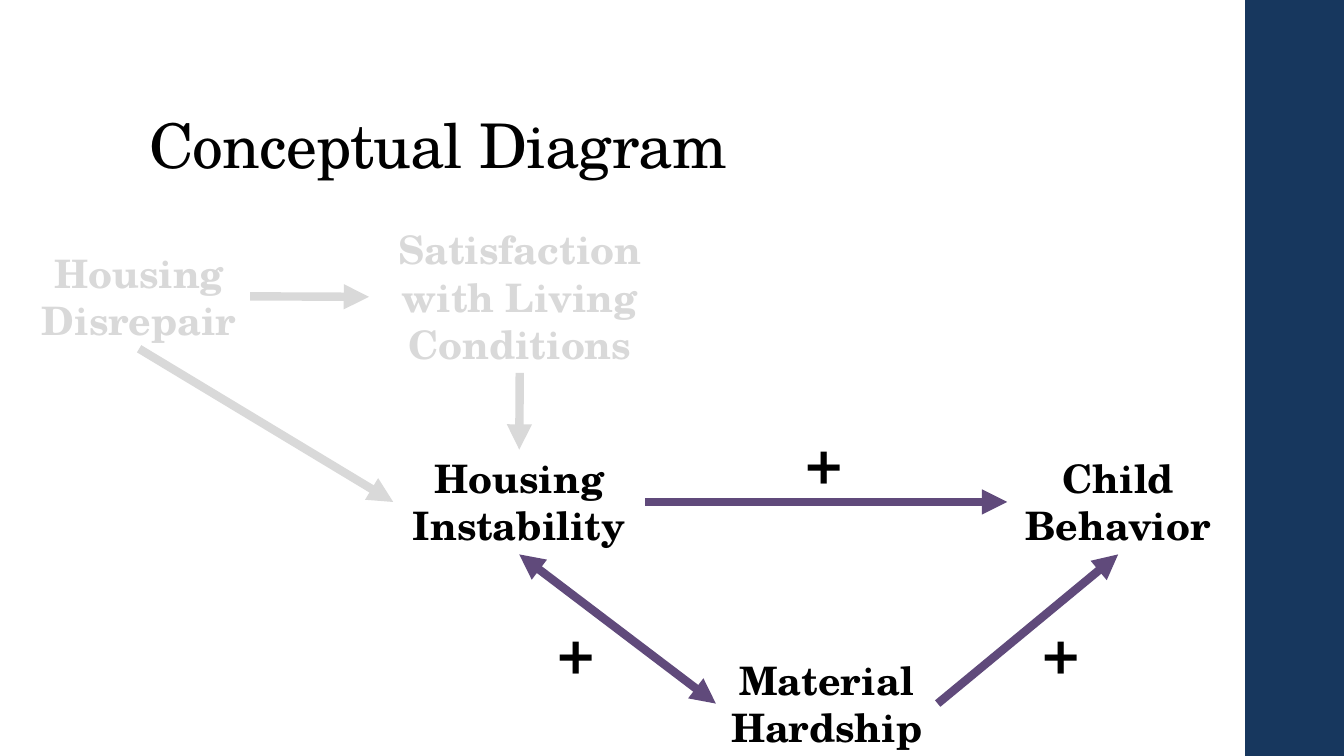
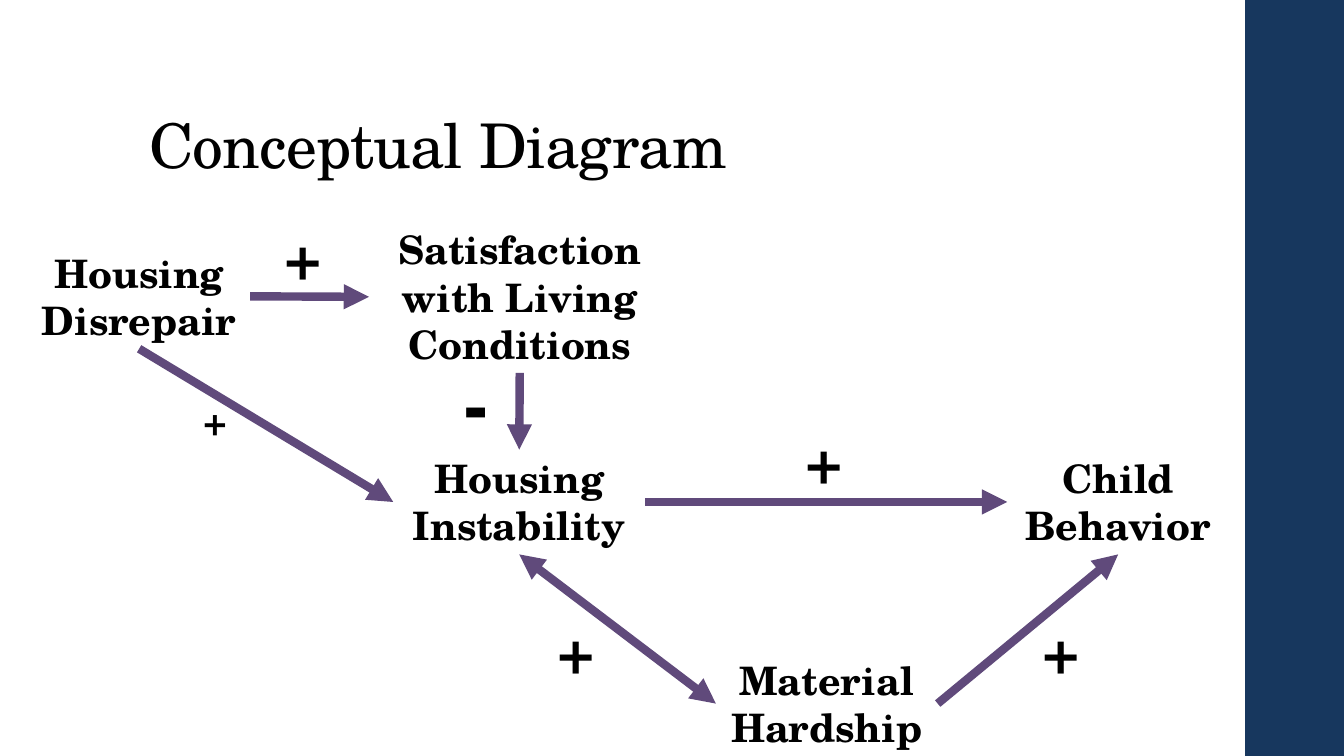
from pptx import Presentation
from pptx.dml.color import RGBColor
from pptx.enum.shapes import MSO_CONNECTOR, MSO_SHAPE
from pptx.enum.text import MSO_ANCHOR, MSO_AUTO_SIZE, PP_ALIGN
from pptx.oxml.ns import qn
from pptx.util import Inches, Pt
from lxml.etree import SubElement

FONT = "TeX Gyre Schola"
BLACK = RGBColor(0x00, 0x00, 0x00)
GRAY = RGBColor(0xD9, 0xD9, 0xD9)
NAVY = RGBColor(0x17, 0x37, 0x5E)
PURPLE = RGBColor(0x60, 0x4A, 0x7B)

TOP, LEFT, BOTTOM, RIGHT = range(4)

CONCEPTS = {
    "disrepair": ("Housing Disrepair", 0.28, 2.42, 2.2, 1.04),
    "satisfaction": ("Satisfaction with Living Conditions", 3.66, 2.19, 2.99, 1.51),
    "instability": ("Housing Instability", 3.9, 4.46, 2.5, 1.04),
    "hardship": ("Material Hardship", 7.1, 6.46, 2.2, 1.04),
    "behavior": ("Child Behavior", 9.99, 4.46, 2.2, 1.04),
}
HOUSING_CONDITIONS = {"disrepair", "satisfaction"}

LINKS = [
    ("disrepair", RIGHT, "satisfaction", LEFT, False),
    ("satisfaction", BOTTOM, "instability", TOP, False),
    ("instability", RIGHT, "behavior", LEFT, False),
    ("hardship", RIGHT, "behavior", BOTTOM, False),
    ("instability", BOTTOM, "hardship", LEFT, True),
    ("disrepair", BOTTOM, "instability", LEFT, False),
]

OUTCOME_SIGNS = [
    ("+", 5.43, 6.02, 0.84, 44),
    ("+", 7.89, 4.14, 0.84, 44),
    ("+", 10.24, 6.02, 0.84, 44),
]
CONDITION_SIGNS = [
    ("+", 2.72, 2.11, 0.84, 44),
    ("-", 4.5, 3.48, 1.01, 54),
    ("+", 1.92, 3.88, 0.57, 28),
]


def add_text(s, text, x, y, w, h, size=28, color=BLACK, bold=True,
             align=PP_ALIGN.LEFT, anchor=MSO_ANCHOR.TOP,
             fit=MSO_AUTO_SIZE.SHAPE_TO_FIT_TEXT, line_spacing=None, tracking=None):
    box = s.shapes.add_textbox(Inches(x), Inches(y), Inches(w), Inches(h))
    tf = box.text_frame
    tf.word_wrap = True
    tf.auto_size = fit
    tf.vertical_anchor = anchor
    p = tf.paragraphs[0]
    p.alignment = align
    p.line_spacing = line_spacing
    r = p.add_run()
    r.text = text
    r.font.name = FONT
    r.font.size = Pt(size)
    r.font.bold = bold
    r.font.color.rgb = color
    if tracking is not None:
        r.font._element.set("spc", str(int(tracking * 100)))
    return box


def add_arrow(s, start, start_side, end, end_side, color, two_way=False):
    arrow = s.shapes.add_connector(MSO_CONNECTOR.STRAIGHT, 0, 0, 0, 0)
    arrow.begin_connect(start, start_side)
    arrow.end_connect(end, end_side)
    arrow.line.color.rgb = color
    arrow.line.width = Pt(6)
    ln = arrow.line._get_or_add_ln()
    for tag in ("a:headEnd", "a:tailEnd") if two_way else ("a:tailEnd",):
        SubElement(ln, qn(tag), type="triangle")
    SubElement(arrow._element.spPr, qn("a:effectLst"))


def add_base_slide(prs, title):
    s = prs.slides.add_slide(prs.slide_layouts[6])
    band = s.shapes.add_shape(MSO_SHAPE.RECTANGLE, Inches(12.35), 0, Inches(0.98), prs.slide_height)
    band.shadow.inherit = False
    band.fill.solid()
    band.fill.fore_color.rgb = NAVY
    band.line.fill.background()
    add_text(s, title, 1.38, 0.4, 10.6, 1.45, size=44, bold=False, anchor=MSO_ANCHOR.BOTTOM,
             fit=MSO_AUTO_SIZE.NONE, line_spacing=0.9, tracking=-0.5)
    return s


def add_diagram_slide(prs, signs, faded=frozenset()):
    s = add_base_slide(prs, "Conceptual Diagram")
    boxes = {
        key: add_text(s, *concept, color=GRAY if key in faded else BLACK, align=PP_ALIGN.CENTER)
        for key, concept in CONCEPTS.items()
    }
    for start, start_side, end, end_side, two_way in LINKS:
        add_arrow(s, boxes[start], start_side, boxes[end], end_side,
                  GRAY if start in faded else PURPLE, two_way)
    for sign, x, y, h, size in signs:
        add_text(s, sign, x, y, 0.93, h, size=size)


def main():
    prs = Presentation()
    prs.slide_width = Inches(13.33)
    prs.slide_height = Inches(7.5)
    add_diagram_slide(prs, OUTCOME_SIGNS, faded=HOUSING_CONDITIONS)
    add_diagram_slide(prs, OUTCOME_SIGNS + CONDITION_SIGNS)
    prs.save("out.pptx")


if __name__ == "__main__":
    main()
